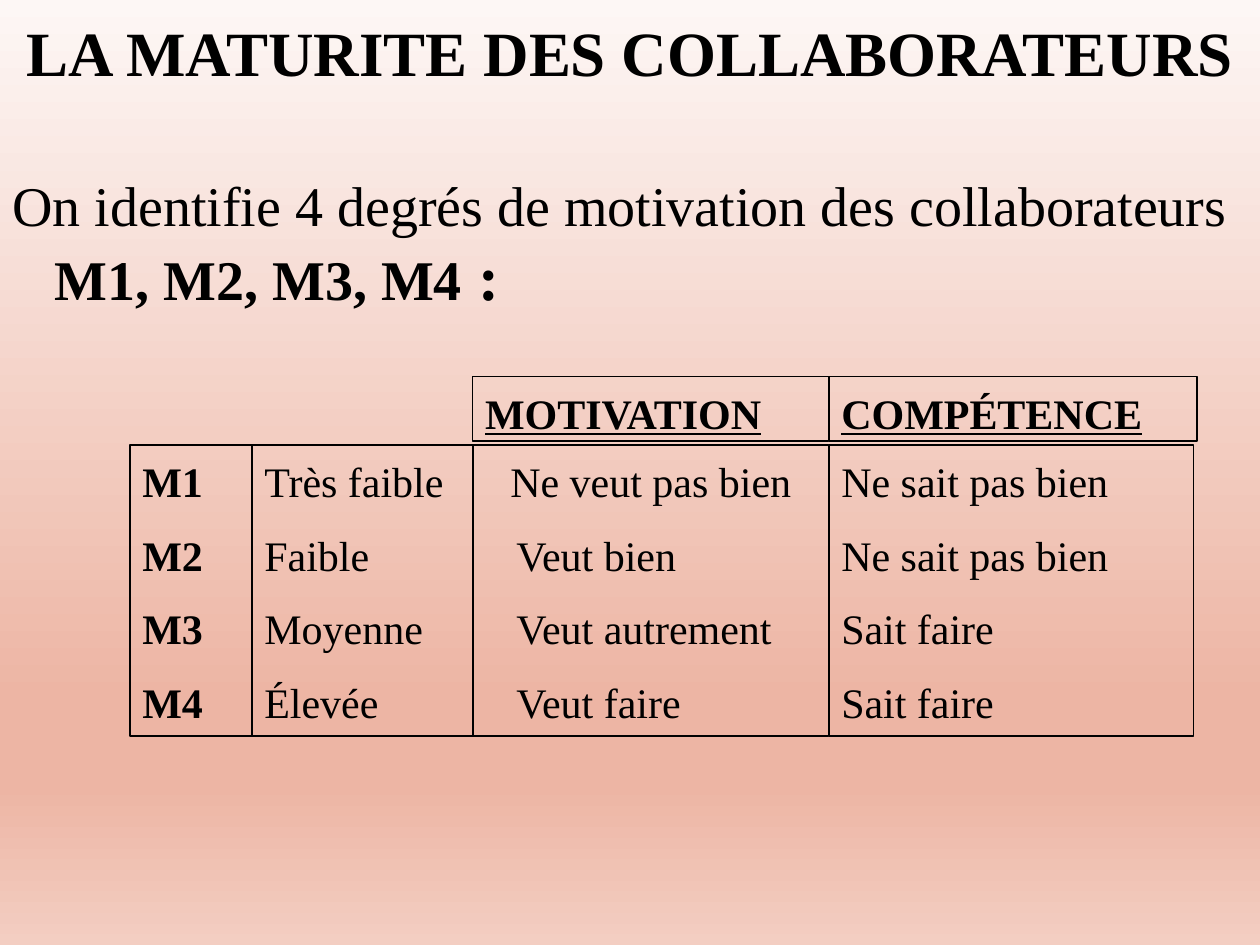
from dataclasses import dataclass

from pptx import Presentation
from pptx.dml.color import RGBColor
from pptx.enum.shapes import MSO_SHAPE as Shape
from pptx.enum.text import MSO_ANCHOR as Anchor, PP_ALIGN as Align
from pptx.oxml import parse_xml
from pptx.oxml.ns import nsdecls
from pptx.util import Cm, Pt

FONT = "Times New Roman"
BLACK = "000000"
GRADIENT = [(0, "FDF7F5"), (74, "EDB5A4"), (83, "EDB5A4"), (100, "F3CEC2")]


@dataclass
class Span:
    text: str
    size: int = 24
    bold: bool = False
    underline: bool = False


@dataclass
class Para:
    spans: list[Span]
    align: Align = Align.LEFT
    margin: float = 0
    indent: float = 0


@dataclass
class Column:
    left: float
    width: float
    paras: list[Para]


def color(value: str) -> RGBColor:
    return RGBColor.from_string(value)


def paint_background(page) -> None:
    stops = "".join(
        f'<a:gs pos="{pos * 1000}"><a:srgbClr val="{value}"/></a:gs>'
        for pos, value in GRADIENT
    )
    background = parse_xml(
        f'<p:bg {nsdecls("p", "a")}><p:bgPr><a:gradFill rotWithShape="1">'
        f'<a:gsLst>{stops}</a:gsLst><a:lin ang="5400000" scaled="0"/>'
        "</a:gradFill><a:effectLst/></p:bgPr></p:bg>"
    )
    page.element.cSld.insert(0, background)


def fill_text(box, paras: list[Para], inset_top: float) -> None:
    frame = box.text_frame
    frame.word_wrap = True
    frame.vertical_anchor = Anchor.TOP
    frame.margin_left = frame.margin_right = Cm(0.25)
    frame.margin_top, frame.margin_bottom = Cm(inset_top), Cm(0.13)
    for number, item in enumerate(paras):
        para = frame.add_paragraph() if number else frame.paragraphs[0]
        para.alignment = item.align
        if number:
            para.space_before = Pt(13.2)
        if item.margin:
            properties = para._p.get_or_add_pPr()
            properties.set("marL", str(Cm(item.margin)))
            properties.set("indent", str(Cm(item.indent)))
        for part in item.spans:
            span = para.add_run()
            span.text = part.text
            span.font.name = FONT
            span.font.size = Pt(part.size)
            span.font.bold = part.bold
            span.font.underline = part.underline
            span.font.color.rgb = color(BLACK)


def add_text(page, top: float, height: float, para: Para, inset_top: float) -> None:
    box = page.shapes.add_textbox(0, Cm(top), Cm(25.4), Cm(height))
    fill_text(box, [para], inset_top)


def add_cell(page, column: Column, top: float, height: float) -> None:
    box = page.shapes.add_shape(
        Shape.RECTANGLE, Cm(column.left), Cm(top), Cm(column.width), Cm(height)
    )
    box.shadow.inherit = False
    box.fill.background()
    box.line.color.rgb = color(BLACK)
    box.line.width = Pt(0.75)
    fill_text(box, column.paras, 0.22)


def lines(*texts: str, bold: bool = False, margin: float = 0) -> list[Para]:
    return [Para([Span(text, bold=bold)], margin=margin) for text in texts]


def heading(text: str) -> list[Para]:
    return [Para([Span(text, bold=True, underline=True)])]


HEADINGS = [
    Column(9.53, 7.18, heading("MOTIVATION")),
    Column(16.71, 7.42, heading("COMPÉTENCE")),
]
COLUMNS = [
    Column(5.08, 4.46, lines("Très faible", "Faible", "Moyenne", "Élevée")),
    Column(9.53, 7.18, [
        Para([Span("Ne veut pas bien")], Align.CENTER),
        *lines("Veut bien", "Veut autrement", "Veut faire", margin=0.63),
    ]),
    Column(16.71, 7.35, lines(
        "Ne sait pas bien", "Ne sait pas bien", "Sait faire", "Sait faire")),
    Column(2.62, 2.46, lines("M1", "M2", "M3", "M4", bold=True)),
]


def main() -> None:
    deck = Presentation()
    deck.slide_width, deck.slide_height = Cm(25.4), Cm(19.05)
    page = deck.slides.add_slide(deck.slide_layouts[6])
    paint_background(page)

    # Title and introduction
    title = Para([Span("LA MATURITE DES COLLABORATEURS", 36, True)], Align.CENTER)
    add_text(page, 0, 1.78, title, 0.27)
    intro = Para([
        Span("On identifie 4 degrés de motivation des collaborateurs ", 32),
        Span("M1, M2, M3, M4", 32, True),
        Span(" :", 36, True),
    ], margin=0.85, indent=-0.85)
    add_text(page, 3.18, 3.12, intro, 0.25)

    # Maturity grid: columns, then their headings
    for column in COLUMNS:
        add_cell(page, column, 8.97, 5.87)
    for column in HEADINGS:
        add_cell(page, column, 7.59, 1.3)

    deck.save("out.pptx")


if __name__ == "__main__":
    main()
